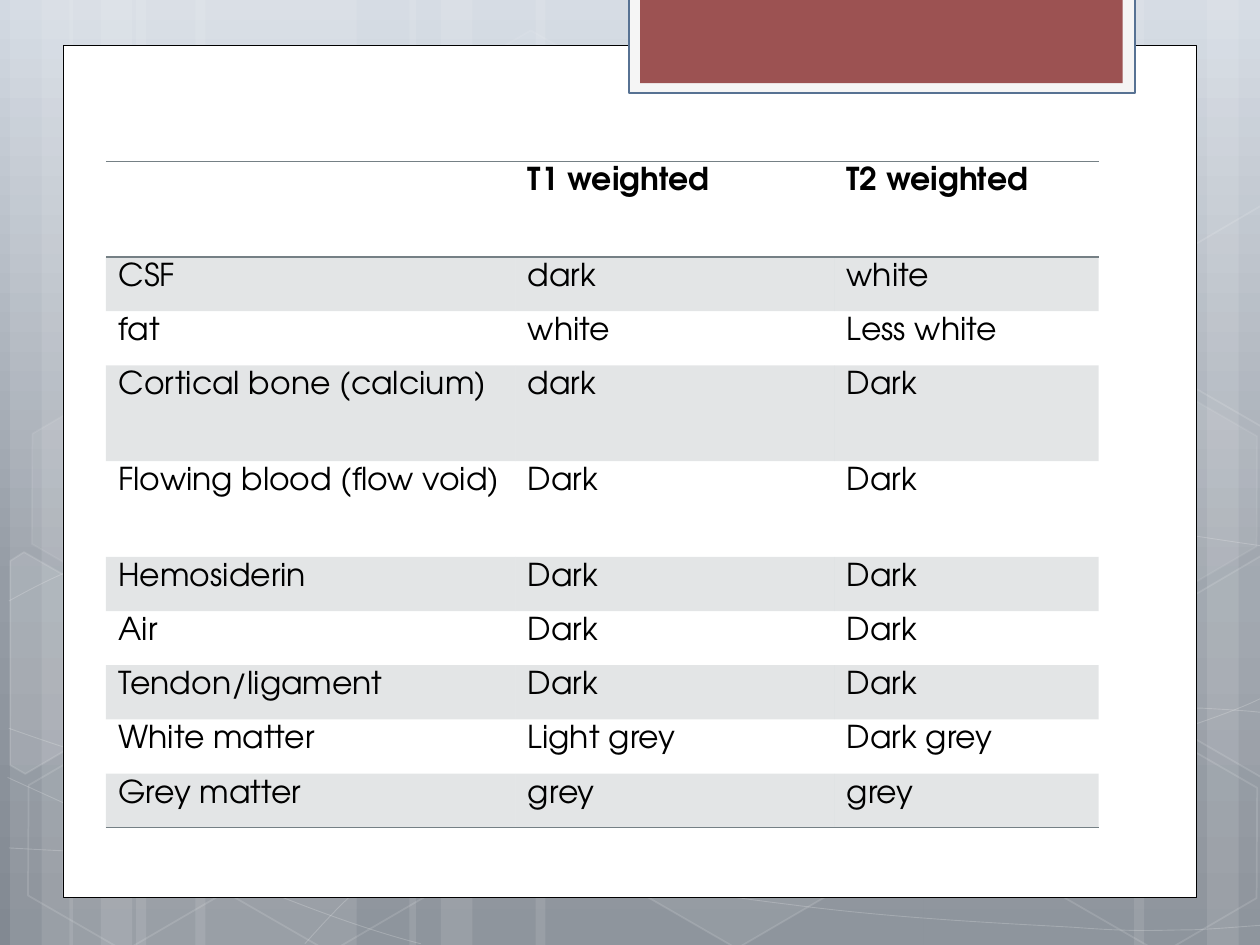
from pptx import Presentation
from pptx.dml.color import RGBColor
from pptx.enum.shapes import MSO_SHAPE as Shape
from pptx.oxml.ns import qn
from pptx.util import Inches, Pt
from lxml.etree import SubElement
from copy import deepcopy
from math import cos, radians, sin

COLORS = {
    "white": "FFFFFF", "black": "000000", "frame": "F5F5F5", "frame_line": "577293",
    "tab": "9C5252", "slate": "758085",
}
BACKDROP_STOPS = [(0, "D2D9E2"), (0.62, "959CA5"), (1, "828992")]
FONT = "TeX Gyre Adventor"
TILT = 30

# left, width, rotation
STRIPES = [(1.08, 1.75, 0), (0.08, 0.5, 0), (0.33, 0.83, 0), (1.55, 1.75, 0), (0.55, 0.5, 0),
           (0.8, 0.83, 0), (7.33, 1.75, 180), (9.58, 0.5, 180), (9, 0.83, 180),
           (4.25, 3.08, 0), (3.25, 0.5, 0), (3.5, 0.83, 0)]
# start point, then cubic segments (two control points and an end point) or a line's end point
CURVES = [
    [(0.07, 6.73), (0.61, 6.76, 1.15, 6.79, 1.9, 6.78), (2.65, 6.77, 3.58, 6.75, 4.58, 6.65),
     (5.58, 6.55, 7, 6.36, 7.92, 6.17), (8.83, 5.98, 9.77, 5.68, 10.07, 5.51)],
    [(0.07, 4.77), (0.36, 4.61, 0.65, 4.46, 1.21, 4.31), (1.78, 4.16, 2.59, 3.94, 3.47, 3.87),
     (4.36, 3.8, 5.44, 3.79, 6.54, 3.87), (7.64, 3.95, 9.47, 4.26, 10.07, 4.34)],
    [(0.06, 6.17), (1.27, 6.72, 2.47, 7.27, 3.34, 7.49)],
    [(0.07, 5.78), (0.38, 5.89, 0.7, 6, 1.28, 6.16), (1.86, 6.31, 2.73, 6.56, 3.57, 6.73),
     (4.4, 6.9, 5.45, 7.08, 6.28, 7.18), (7.11, 7.29, 8, 7.33, 8.53, 7.36),
     (9.05, 7.4, 9.19, 7.38, 9.45, 7.38), (9.71, 7.37, 9.89, 7.35, 10.07, 7.34)],
    [(2.42, 7.49), (2.6, 7.29, 2.78, 7.09, 3.02, 6.91), (3.26, 6.73, 3.6, 6.53, 3.88, 6.39),
     (4.16, 6.25, 4.33, 6.19, 4.7, 6.09), (5.06, 5.99, 5.73, 5.85, 6.08, 5.78),
     (6.44, 5.71, 6.49, 5.71, 6.8, 5.69), (7.11, 5.66, 7.6, 5.63, 7.94, 5.62),
     (8.29, 5.61, 8.86, 5.62, 8.86, 5.62), (9.53, 5.62),
     (9.71, 5.63, 9.88, 5.64, 9.97, 5.65), (10.06, 5.66, 10.03, 5.65, 10.06, 5.66)],
]
# left, top, fill opacity (0 for none), line opacity
HEXAGONS = [(3.34, 0.36, 4, 8), (4.97, 5.89, 6, 12), (0.11, 5.91, 0, 12), (0.14, 3.12, 7, 8),
            (1.74, 5.92, 0, 12), (7.53, 4.53, 10, 12), (8.34, 5.93, 0, 12), (8.34, 3.14, 7, 8)]
# outline as seen, centre of its tilt, fill opacity
CUT_HEXAGONS = [
    ([(0.08, 4.45), (0.19, 4.38), (0.96, 4.82), (0.95, 5.7), (0.2, 6.14), (0.08, 6.07)],
     (0.36, 5.35), 10),
    ([(9.26, 4.85), (10.01, 4.41), (10.09, 4.46), (10.09, 6.13), (10.02, 6.17), (9.26, 5.73)],
     (9.85, 5.2), 4),
    ([(9.26, 2.07), (10.01, 1.63), (10.1, 1.68), (10.09, 3.35), (10.02, 3.39), (9.26, 2.95)],
     (9.85, 2.41), 0),
]

SIGNALS = [
    ("", "T1 weighted", "T2 weighted"),
    ("CSF", "dark", "white"),
    ("fat", "white", "Less white"),
    ("Cortical bone (calcium)", "dark", "Dark"),
    ("Flowing blood (flow void)", "Dark", "Dark"),
    ("Hemosiderin", "Dark", "Dark"),
    ("Air", "Dark", "Dark"),
    ("Tendon/ligament", "Dark", "Dark"),
    ("White matter", "Light grey", "Dark grey"),
    ("Grey matter", "grey", "grey"),
]
TALL_ROWS = (0, 3, 4)
COLUMN_SHARES = (3.25, 2.53, 2.1)


def rgb(name):
    return RGBColor.from_string(COLORS[name])


def paint(fill, color, opacity=100):
    """Fill with a colour; an opacity of 0 leaves no fill."""
    if not opacity:
        fill.background()
        return
    fill.solid()
    fill.fore_color.rgb = rgb(color)
    if opacity < 100:
        tint = fill._xPr.find(f"{qn('a:solidFill')}/{qn('a:srgbClr')}")
        SubElement(tint, qn("a:alpha"), val=str(opacity * 1000))


def style(shape, fill="white", opacity=100, line=None, weight=1, line_opacity=100):
    shape.shadow.inherit = False
    paint(shape.fill, fill, opacity)
    if line:
        shape.line.width = Pt(weight)
        paint(shape.line.fill, line, line_opacity)
    else:
        shape.line.fill.background()


def add_outline(slide, points, close):
    start, *rest = [(Inches(x), Inches(y)) for x, y in points]
    builder = slide.shapes.build_freeform(*start)
    builder.add_line_segments(rest, close=close)
    return builder.convert_to_shape()


def add_curve(slide, start, *segments):
    """Outline through all points, whose control points are then joined into cubic segments."""
    points = [start] + [pair for s in segments for pair in zip(s[::2], s[1::2])]
    curve = add_outline(slide, points, close=False)
    steps = iter(list(curve._element.iter(qn("a:lnTo"))))
    for segment in segments:
        first = next(steps)
        if len(segment) == 6:
            first.tag = qn("a:cubicBezTo")
            for step in (next(steps), next(steps)):
                first.append(step[0])
                step.getparent().remove(step)
    return curve


def untilt(points, centre):
    """Points turned back about the centre by the tilt."""
    c, s = cos(radians(TILT)), sin(radians(TILT))
    cx, cy = centre
    return [(cx + (x - cx) * c + (y - cy) * s, cy - (x - cx) * s + (y - cy) * c)
            for x, y in points]


def add_backdrop(slide, height):
    fill = slide.background.fill
    fill.gradient()
    fill.gradient_angle = 270
    stop_list = slide.element.find(f".//{qn('a:gsLst')}")
    stop_list.append(deepcopy(stop_list[-1]))
    for stop, (position, color) in zip(fill.gradient_stops, BACKDROP_STOPS):
        stop.position = position
        stop.color.rgb = RGBColor.from_string(color)

    for left, width, rotation in STRIPES:
        stripe = slide.shapes.add_shape(Shape.RECTANGLE, Inches(left), 0, Inches(width), height)
        stripe.rotation = rotation
        style(stripe, opacity=10)
    for curve in CURVES:
        style(add_curve(slide, *curve), opacity=0, line="white", weight=0.5, line_opacity=20)
    for left, top, opacity, line_opacity in HEXAGONS:
        hexagon = slide.shapes.add_shape(Shape.HEXAGON, Inches(left), Inches(top),
                                         Inches(1.75), Inches(1.52))
        hexagon.adjustments[0] = 0.285
        hexagon.rotation = TILT
        style(hexagon, opacity=opacity, line="white", line_opacity=line_opacity)
    for points, centre, opacity in CUT_HEXAGONS:
        cut_hexagon = add_outline(slide, untilt(points, centre), close=True)
        cut_hexagon.rotation = TILT
        style(cut_hexagon, opacity=opacity, line="white", line_opacity=12)


def add_panel(slide, left, top, width, height):
    """White page with the red tab hanging over its top right."""
    page = slide.shapes.add_shape(Shape.RECTANGLE, left, top, width, height)
    style(page, line="black", weight=0.5)
    tab_left, tab_top = left + Inches(4.49), top - Inches(0.38)
    frame = slide.shapes.add_shape(Shape.RECTANGLE, tab_left, tab_top, Inches(4.02), Inches(0.76))
    style(frame, "frame", line="frame_line", weight=1.25)
    tab = slide.shapes.add_shape(Shape.RECTANGLE, tab_left + Inches(0.09), tab_top,
                                 Inches(3.83), Inches(0.68))
    style(tab, "tab")


def add_border(cell, side):
    """Rule on one side of a cell: lnT or lnB."""
    border = SubElement(cell._tc.get_or_add_tcPr(), qn(f"a:{side}"), w=str(Pt(1)))
    SubElement(SubElement(border, qn("a:solidFill")), qn("a:srgbClr"), val=COLORS["slate"])


def add_signal_table(slide, left, top, width, height):
    table = slide.shapes.add_table(len(SIGNALS), len(COLUMN_SHARES),
                                   left, top, width, height).table
    table.first_row = table.horz_banding = False
    no_style = "{2D5ABB26-0587-4C30-8999-92F81FD0307C}"
    table._tbl.tblPr.find(qn("a:tableStyleId")).text = no_style
    for column, share in zip(table.columns, COLUMN_SHARES):
        column.width = int(width * share / sum(COLUMN_SHARES))
    for r, texts in enumerate(SIGNALS):
        table.rows[r].height = Inches(0.76 if r in TALL_ROWS else 0.43)
        for c, text in enumerate(texts):
            cell = table.cell(r, c)
            cell.text = text
            font = cell.text_frame.paragraphs[0].font
            font.name, font.size, font.bold = FONT, Pt(18), r == 0
            font.color.rgb = rgb("black")
            if r == 0:
                add_border(cell, "lnT")
            if r in (0, len(SIGNALS) - 1):
                add_border(cell, "lnB")
            paint(cell.fill, "slate", 20 if r % 2 else 0)


def main():
    prs = Presentation()
    prs.slide_width, prs.slide_height = Inches(10), Inches(7.5)
    slide = prs.slides.add_slide(prs.slide_layouts[6])
    add_backdrop(slide, prs.slide_height)
    add_panel(slide, Inches(0.5), Inches(0.36), Inches(9), Inches(6.76))
    add_signal_table(slide, Inches(0.84), Inches(1.28), Inches(7.88), Inches(5.33))
    prs.save("out.pptx")


if __name__ == "__main__":
    main()
